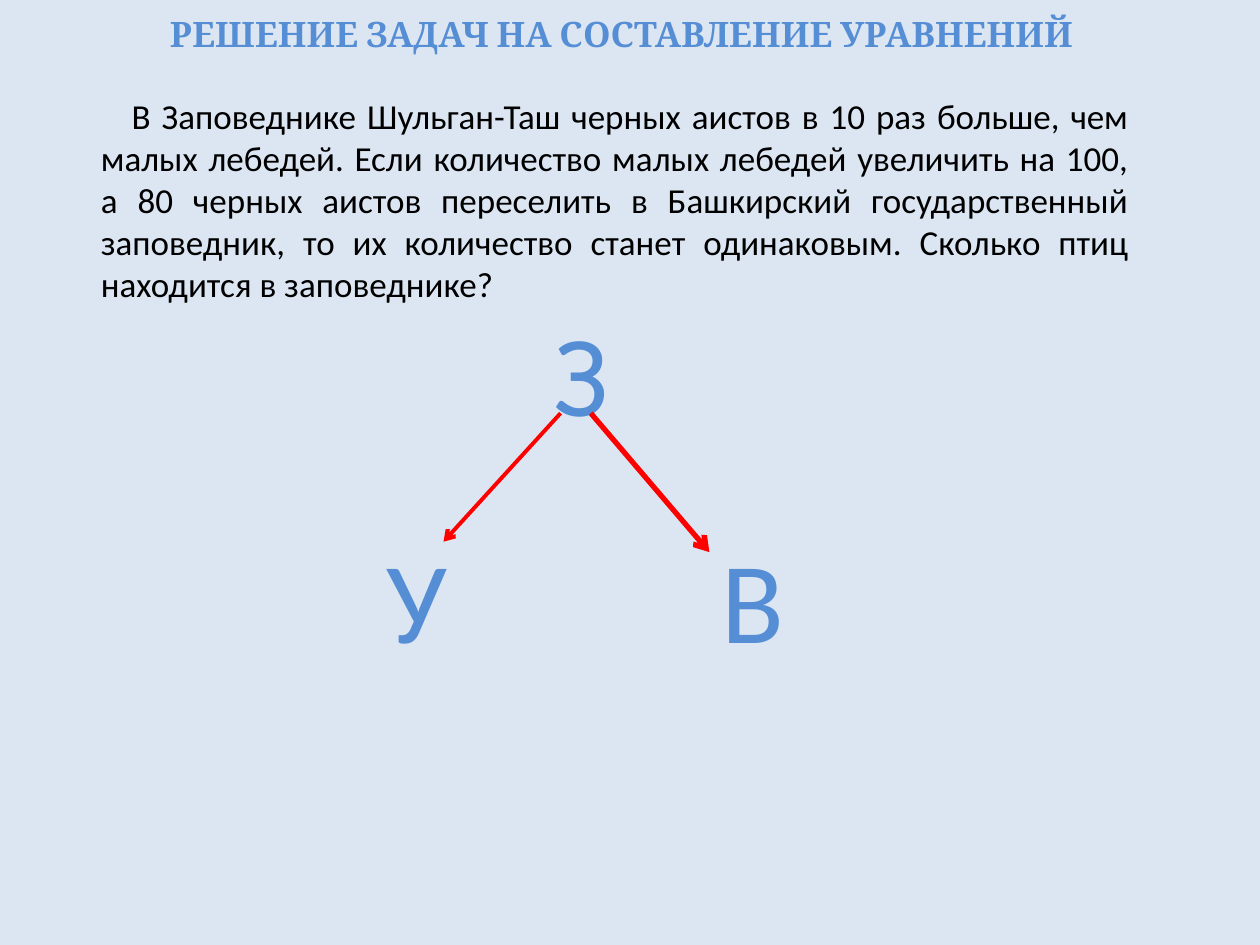
from lxml import etree
from pptx import Presentation
from pptx.dml.color import RGBColor
from pptx.enum.shapes import MSO_CONNECTOR
from pptx.enum.text import MSO_ANCHOR, MSO_AUTO_SIZE, PP_ALIGN
from pptx.oxml.ns import qn
from pptx.util import Cm, Pt

CENTER, JUSTIFY = PP_ALIGN.CENTER, PP_ALIGN.JUSTIFY
TOP = MSO_ANCHOR.TOP
NO_AUTOFIT = MSO_AUTO_SIZE.NONE
STRAIGHT = MSO_CONNECTOR.STRAIGHT

COLORS = {"background": "DCE6F2", "accent": "558ED5", "text": "000000", "arrow": "FF0000"}


def place(box, left, top, width, height):
    box.left, box.top, box.width, box.height = Cm(left), Cm(top), Cm(width), Cm(height)


def write(box, text, size, font_name, color, align, bold=False):
    frame = box.text_frame
    frame.word_wrap = True
    frame.auto_size = NO_AUTOFIT
    frame.vertical_anchor = TOP
    para = frame.paragraphs[0]
    para.text = text
    para.alignment = align
    para.space_before = Pt(0)
    font = para.font
    font.size, font.name, font.bold = Pt(size), font_name, bold
    font.color.rgb = RGBColor.from_string(COLORS[color])


deck = Presentation()
deck.slide_width, deck.slide_height = Cm(25.4), Cm(19.05)
page = deck.slides.add_slide(deck.slide_layouts[1])
page.background.fill.solid()
page.background.fill.fore_color.rgb = RGBColor.from_string(COLORS["background"])

# Title
title = page.shapes.title
place(title, 0.81, 0.13, 23.44, 1.09)
write(title, "РЕШЕНИЕ ЗАДАЧ НА СОСТАВЛЕНИЕ УРАВНЕНИЙ", 20, "Cambria", "accent", CENTER, True)

# Problem statement: no bullet, first line indented
problem = page.placeholders[1]
place(problem, 1.78, 1.78, 21.23, 4.52)
properties = problem.text_frame.paragraphs[0]._p.get_or_add_pPr()
properties.set("marL", "0")
properties.set("indent", str(Cm(0.62)))
etree.SubElement(properties, qn("a:buNone"))
write(
    problem,
    "В Заповеднике Шульган-Таш черных аистов в 10 раз больше, чем малых лебедей. "
    "Если количество малых лебедей увеличить на 100, а 80 черных аистов переселить "
    "в Башкирский государственный заповедник, то их количество станет одинаковым. "
    "Сколько птиц находится в заповеднике?",
    20, "Calibri", "text", JUSTIFY,
)

# Letters of the scheme
for letter, left, top, width in [("З", 10.52, 5.94, 2.39), ("У", 7.54, 10.52, 1.4), ("В", 14.3, 10.52, 1.4)]:
    box = page.shapes.add_textbox(Cm(left), Cm(top), Cm(width), Cm(3.07))
    write(box, letter, 66, "Calibri", "accent", CENTER)

# Arrows from the top letter to the lower ones
for start_x, end_x, end_y, weight in [(11.3, 8.94, 10.92, 2.25), (11.91, 14.3, 11.13, 3)]:
    arrow = page.shapes.add_connector(STRAIGHT, Cm(start_x), Cm(8.33), Cm(end_x), Cm(end_y))
    arrow.line.width = Pt(weight)
    arrow.line.color.rgb = RGBColor.from_string(COLORS["arrow"])
    etree.SubElement(arrow.line._get_or_add_ln(), qn("a:tailEnd"), type="arrow")
    etree.SubElement(arrow._element.spPr, qn("a:effectLst"))

deck.save("out.pptx")
